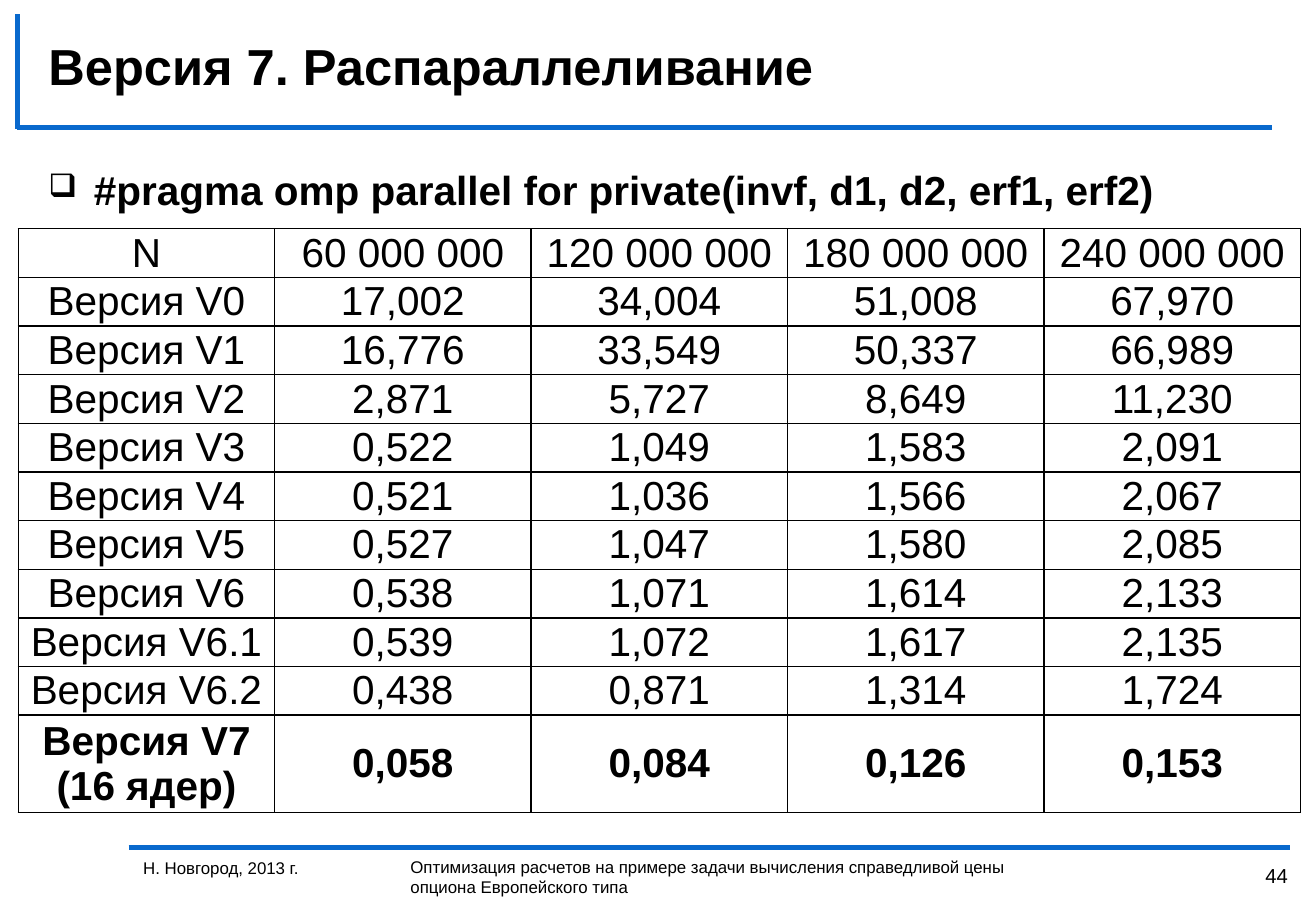
from dataclasses import dataclass

from lxml.etree import SubElement as Sub
from pptx import Presentation
from pptx.dml.color import RGBColor as Rgb
from pptx.enum.shapes import MSO_CONNECTOR as Link
from pptx.enum.text import MSO_ANCHOR as Anchor, PP_ALIGN as Align
from pptx.oxml.ns import qn
from pptx.util import Pt


@dataclass(frozen=True)
class Theme:
    font: str = "Arial"
    ink: str = "000000"
    rule: str = "0969CD"
    title: int = 30
    body: int = 24
    page: int = 12
    foot: int = 10


THEME = Theme()

HEAD = ["N", "60 000 000", "120 000 000", "180 000 000", "240 000 000"]
TIMES = [
    ["Версия V0", "17,002", "34,004", "51,008", "67,970"],
    ["Версия V1", "16,776", "33,549", "50,337", "66,989"],
    ["Версия V2", "2,871", "5,727", "8,649", "11,230"],
    ["Версия V3", "0,522", "1,049", "1,583", "2,091"],
    ["Версия V4", "0,521", "1,036", "1,566", "2,067"],
    ["Версия V5", "0,527", "1,047", "1,580", "2,085"],
    ["Версия V6", "0,538", "1,071", "1,614", "2,133"],
    ["Версия V6.1", "0,539", "1,072", "1,617", "2,135"],
    ["Версия V6.2", "0,438", "0,871", "1,314", "1,724"],
    ["Версия V7\n(16 ядер)", "0,058", "0,084", "0,126", "0,153"],
]


def style(frame, size, bold=False, align=Align.LEFT):
    for para in frame.paragraphs:
        para.alignment = align
        for run in para.runs:
            font = run.font
            font.name, font.size, font.bold = THEME.font, Pt(size), bold
            font.color.rgb = Rgb.from_string(THEME.ink)


def add_text(slide, text, box, size, bold=False, align=Align.LEFT,
             anchor=Anchor.TOP):
    frame = slide.shapes.add_textbox(*map(Pt, box)).text_frame
    frame.word_wrap = True
    frame.vertical_anchor = anchor
    frame.text = text
    style(frame, size, bold, align)
    return frame


def add_bullet(para, mark, indent):
    props = para._p.get_or_add_pPr()
    props.set("marL", str(Pt(indent)))
    props.set("indent", str(-Pt(indent)))
    Sub(props, qn("a:buSzPct"), val="80000")
    Sub(props, qn("a:buChar"), char=mark)


def add_rule(slide, *ends):
    rule = slide.shapes.add_connector(Link.STRAIGHT, *map(Pt, ends))
    rule.line.color.rgb = Rgb.from_string(THEME.rule)
    rule.line.width = Pt(3)
    Sub(rule._element.spPr, qn("a:effectLst"))


def add_border(cell):
    props = cell._tc.get_or_add_tcPr()
    for side in ("a:lnL", "a:lnR", "a:lnT", "a:lnB"):
        line = Sub(props, qn(side), w=str(Pt(1)))
        Sub(Sub(line, qn("a:solidFill")), qn("a:srgbClr"), val=THEME.ink)


def add_grid(slide, rows, left, top, wide, high):
    """Each row is as high as its longest cell has lines."""
    lines = [max(text.count("\n") + 1 for text in row) for row in rows]
    table = slide.shapes.add_table(
        len(rows), len(rows[0]), Pt(left), Pt(top),
        Pt(wide * len(rows[0])), Pt(high * sum(lines))).table
    table.first_row = table.horz_banding = False
    for col in table.columns:
        col.width = Pt(wide)
    for r, row in enumerate(rows):
        table.rows[r].height = Pt(high * lines[r])
        for c, text in enumerate(row):
            cell = table.cell(r, c)
            cell.margin_left = cell.margin_right = Pt(5)
            cell.margin_top = cell.margin_bottom = Pt(0)
            cell.vertical_anchor = Anchor.MIDDLE
            add_border(cell)
            cell.fill.background()
            cell.text_frame.text = text
            style(cell.text_frame, THEME.body, r == len(rows) - 1,
                  Align.CENTER)


def main():
    deck = Presentation()
    deck.slide_width, deck.slide_height = Pt(780), Pt(540)
    slide = deck.slides.add_slide(deck.slide_layouts[6])

    # Frame rules
    add_rule(slide, 76.3, 502.6, 764.6, 502.6)
    add_rule(slide, 10.2, 75.6, 753.8, 75.6)
    add_rule(slide, 10.2, 8.6, 10.2, 76.3)

    # Footer
    add_text(slide, "44", (730.8, 508.3, 39.6, 22.3), THEME.page,
             align=Align.RIGHT)
    add_text(slide, "Н. Новгород, 2013 г.", (77.8, 504.7, 151.2, 33.8),
             THEME.foot)
    add_text(slide, "Оптимизация расчетов на примере задачи вычисления "
             "справедливой цены опциона Европейского типа",
             (236.2, 504, 378.7, 31.7), THEME.foot)

    # Title and directive
    add_text(slide, "Версия 7. Распараллеливание", (21.6, 16.6, 743, 43.9),
             THEME.title, bold=True, anchor=Anchor.MIDDLE)
    body = add_text(slide,
                    "#pragma omp parallel for private(invf, d1, d2, erf1, erf2)",
                    (21.6, 94.3, 743, 45.4), THEME.body, bold=True)
    add_bullet(body.paragraphs[0], "❑", 27)

    # Run times
    add_grid(slide, [HEAD] + TIMES, 10.8, 135.6, 152, 26.8)

    deck.save("out.pptx")


if __name__ == "__main__":
    main()
